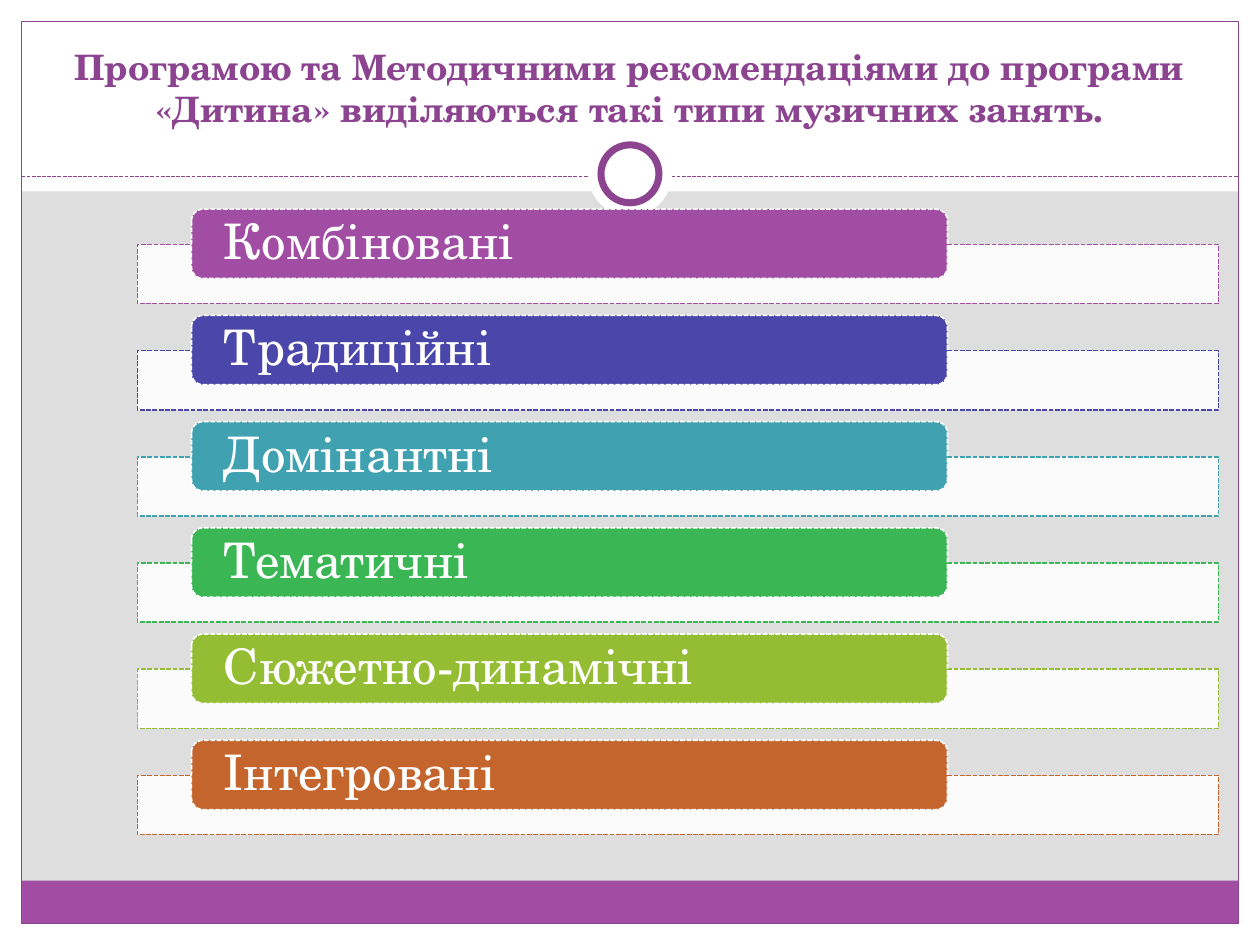
from lxml.etree import SubElement
from pptx import Presentation
from pptx.dml.color import RGBColor
from pptx.enum.dml import MSO_LINE
from pptx.enum.shapes import MSO_CONNECTOR, MSO_SHAPE
from pptx.enum.text import MSO_ANCHOR, PP_ALIGN
from pptx.oxml.ns import qn
from pptx.util import Inches, Pt

TITLE = ("Програмою та Методичними рекомендаціями до програми "
         "«Дитина» виділяються такі типи музичних занять.")
LESSON_TYPES = [
    ("Комбіновані", RGBColor(0xA0, 0x4D, 0xA3)),
    ("Традиційні", RGBColor(0x4B, 0x47, 0xAA)),
    ("Домінантні", RGBColor(0x40, 0xA2, 0xB0)),
    ("Тематичні", RGBColor(0x3A, 0xB7, 0x54)),
    ("Сюжетно-динамічні", RGBColor(0x95, 0xBD, 0x33)),
    ("Інтегровані", RGBColor(0xC4, 0x65, 0x2D)),
]

FONT = "TeX Gyre Schola"
WHITE = RGBColor(0xFF, 0xFF, 0xFF)
GREY = RGBColor(0xDE, 0xDE, 0xDE)
PURPLE = RGBColor(0xA0, 0x4D, 0xA3)
DARK_PURPLE = RGBColor(0x8D, 0x44, 0x90)

WIDTH, HEIGHT = 10, 7.5
MARGIN = 0.17
HEADER_HEIGHT = 1.52
RULE_Y = 1.4
RING_CENTER = (5, 1.38)
FIRST_BAR_TOP, ROW_STEP = 1.66, 0.843
STRIP_DROP = 0.28  # from the top of a bar to the top of its strip


def add_box(slide, kind, at, fill=None, line=None, weight=0.75, dash=None):
    box = slide.shapes.add_shape(kind, *(Inches(length) for length in at))
    box.shadow.inherit = False
    if fill is None:
        box.fill.background()
    else:
        box.fill.solid()
        box.fill.fore_color.rgb = fill
    if line is None:
        box.line.fill.background()
    else:
        box.line.color.rgb = line
        box.line.width = Pt(weight)
        box.line.dash_style = dash
    return box


def add_text(para, text, size, color, bold=False):
    span = para.add_run()
    span.text = text
    span.font.name = FONT
    span.font.size = Pt(size)
    span.font.bold = bold
    span.font.color.rgb = color


def set_opacity(box, percent):
    color = box.fill._xPr.find(qn("a:solidFill"))[0]
    SubElement(color, qn("a:alpha"), val=str(percent * 1000))


def add_frame(slide):
    """Page margins, header, footer band, border, rule and ring."""
    inner = WIDTH - 2 * MARGIN
    for at in [
        (0, HEIGHT - MARGIN, WIDTH, MARGIN),
        (0, 0, WIDTH, HEADER_HEIGHT),
        (0, 0, MARGIN, HEIGHT),
        (WIDTH - MARGIN, 0, MARGIN, HEIGHT),
    ]:
        add_box(slide, MSO_SHAPE.RECTANGLE, at, WHITE)
    add_box(slide, MSO_SHAPE.RECTANGLE, (MARGIN, 6.99, inner, 0.34), PURPLE)
    add_box(slide, MSO_SHAPE.RECTANGLE,
            (MARGIN, MARGIN, inner, HEIGHT - 2 * MARGIN), line=DARK_PURPLE)

    rule = slide.shapes.add_connector(
        MSO_CONNECTOR.STRAIGHT, Inches(MARGIN), Inches(RULE_Y),
        Inches(WIDTH - MARGIN), Inches(RULE_Y))
    rule.line.color.rgb = DARK_PURPLE
    rule.line.width = Pt(0.75)
    rule.line.dash_style = MSO_LINE.SQUARE_DOT
    SubElement(rule.element.spPr, qn("a:effectLst"))

    center_x, center_y = RING_CENTER
    for size, line in [(0.67, None), (0.46, DARK_PURPLE)]:
        at = (center_x - size / 2, center_y - size / 2, size, size)
        add_box(slide, MSO_SHAPE.OVAL, at, WHITE, line, weight=4)


def place_title(slide):
    title = slide.shapes.title
    title.left, title.top = Inches(0.33), Inches(0.25)
    title.width, title.height = Inches(9.33), Inches(0.83)
    slide.shapes.element.append(title.element)  # in front of the header
    frame = title.text_frame
    frame.word_wrap = True
    frame.vertical_anchor = MSO_ANCHOR.BOTTOM
    para = frame.paragraphs[0]
    para.alignment = PP_ALIGN.CENTER
    add_text(para, TITLE, 20, DARK_PURPLE, bold=True)


def add_lesson_type(slide, top, name, color):
    strip = add_box(slide, MSO_SHAPE.RECTANGLE,
                    (1.09, top + STRIP_DROP, 8.58, 0.47),
                    WHITE, color, 0.9, MSO_LINE.SQUARE_DOT)
    set_opacity(strip, 90)
    bar = add_box(slide, MSO_SHAPE.ROUNDED_RECTANGLE, (1.52, top, 6, 0.55),
                  color, WHITE, 0.9, MSO_LINE.SQUARE_DOT)
    frame = bar.text_frame
    frame.word_wrap = True
    frame.vertical_anchor = MSO_ANCHOR.MIDDLE
    frame.margin_left = frame.margin_right = Inches(0.23)
    frame.margin_top = frame.margin_bottom = 0
    para = frame.paragraphs[0]
    para.alignment = PP_ALIGN.LEFT
    para.line_spacing = 0.9
    add_text(para, name, 28, WHITE)


def main():
    deck = Presentation()
    deck.slide_width, deck.slide_height = Inches(WIDTH), Inches(HEIGHT)
    slide = deck.slides.add_slide(deck.slide_layouts[5])
    slide.background.fill.solid()
    slide.background.fill.fore_color.rgb = GREY

    add_frame(slide)
    place_title(slide)
    for row, (name, color) in enumerate(LESSON_TYPES):
        add_lesson_type(slide, FIRST_BAR_TOP + row * ROW_STEP, name, color)
    deck.save("out.pptx")


if __name__ == "__main__":
    main()
